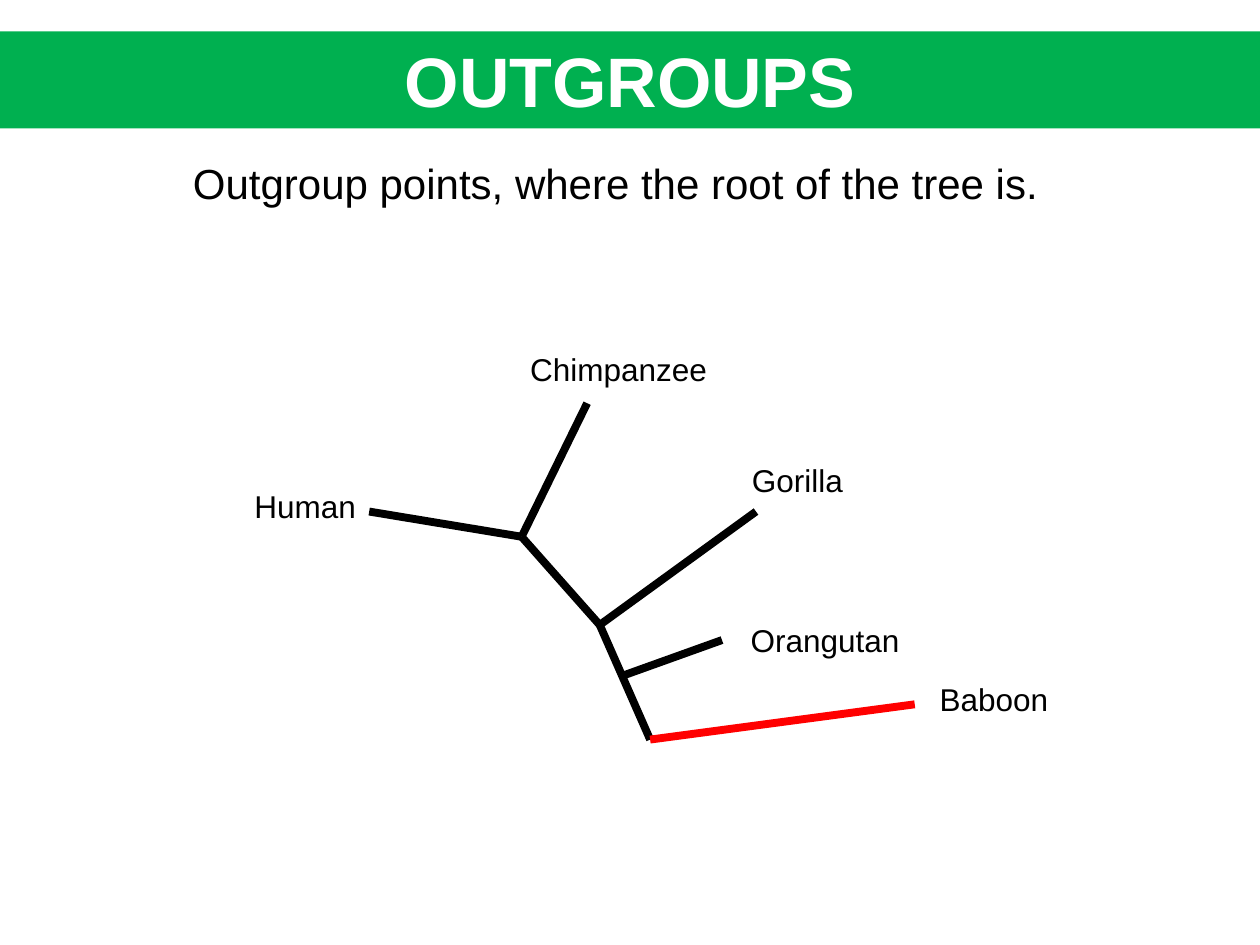
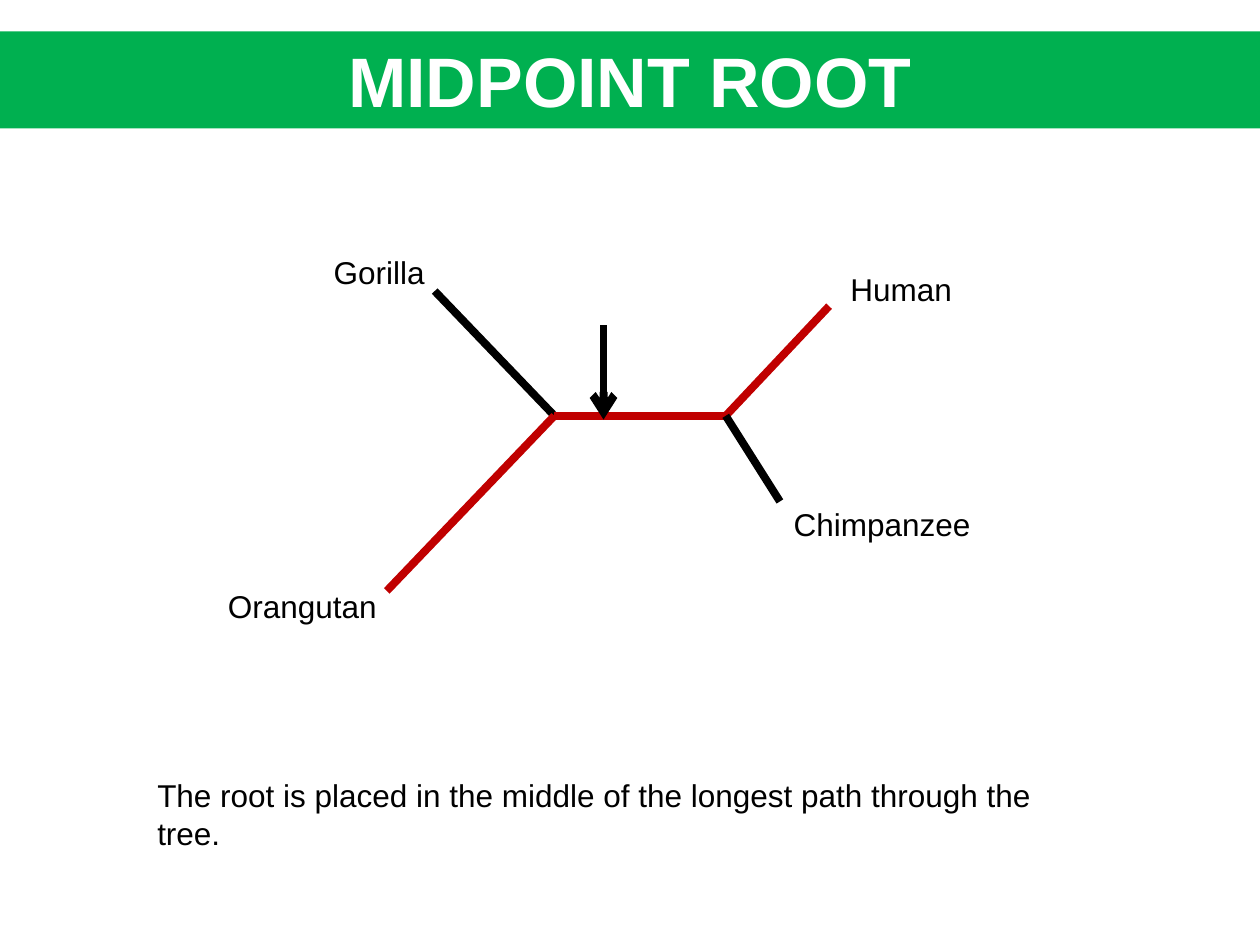
from lxml.etree import SubElement
from pptx import Presentation
from pptx.dml.color import RGBColor
from pptx.enum.shapes import MSO_CONNECTOR, MSO_SHAPE
from pptx.enum.text import MSO_ANCHOR, PP_ALIGN
from pptx.oxml.ns import qn
from pptx.util import Inches, Pt

COLORS = {"band": "00B050", "title": "FFFFFF", "ink": "000000",
          "outgroup": "FF0000", "longest": "C00000"}
FONT = "Arial"
WIDTH, HEIGHT = 10, 7.5
BAND_TOP, BAND_HEIGHT = 0.25, 0.77
LABEL_HEIGHT = 0.4
LABEL_WIDTHS = {"Human": 1.01, "Chimpanzee": 1.62, "Gorilla": 0.93,
                "Orangutan": 1.39, "Baboon": 1.07}

SLIDES = [
    {
        "title": "OUTGROUPS",
        "caption": {"text": "Outgroup points, where the root of the tree is.",
                    "box": (0, 1.2, 9.77, 0.51), "size": 24,
                    "align": PP_ALIGN.CENTER, "wrap": True},
        "points": {
            "Human": (2.93, 4.06), "Chimpanzee": (4.66, 3.2), "Gorilla": (6, 4.06),
            "Orangutan": (5.73, 5.08), "Baboon": (7.26, 5.59),
            "human-chimp": (4.14, 4.26), "african apes": (4.76, 4.96),
            "great apes": (4.95, 5.36), "root": (5.16, 5.87),
        },
        "branches": [
            ("Human", "human-chimp", "ink"),
            ("human-chimp", "Chimpanzee", "ink"),
            ("human-chimp", "african apes", "ink"),
            ("african apes", "Gorilla", "ink"),
            ("african apes", "root", "ink"),
            ("root", "Baboon", "outgroup"),
            ("Orangutan", "great apes", "ink"),
        ],
        "labels": {"Human": (1.92, 3.82), "Chimpanzee": (4.11, 2.73),
                   "Gorilla": (5.87, 3.61), "Orangutan": (5.86, 4.88),
                   "Baboon": (7.36, 5.35)},
        "arrows": [],
    },
    {
        "title": "MIDPOINT ROOT",
        "caption": {"text": "The root is placed in the middle of the longest path through the tree.",
                    "box": (1.15, 6.11, 7.7, LABEL_HEIGHT)},
        "points": {
            "Gorilla": (3.45, 2.31), "Orangutan": (3.07, 4.69),
            "Human": (6.58, 2.43), "Chimpanzee": (6.19, 3.98),
            "left node": (4.4, 3.3), "right node": (5.76, 3.3),
        },
        "branches": [
            ("Gorilla", "left node", "ink"),
            ("Orangutan", "left node", "longest"),
            ("left node", "right node", "longest"),
            ("right node", "Human", "longest"),
            ("right node", "Chimpanzee", "ink"),
        ],
        "labels": {"Human": (6.65, 2.09), "Chimpanzee": (6.2, 3.96),
                   "Gorilla": (2.55, 1.96), "Orangutan": (1.71, 4.61)},
        "arrows": [((4.79, 2.58), (4.79, 3.33))],
    },
]


def color(name):
    return RGBColor.from_string(COLORS[name])


def write(shape, text, size, color_name="ink", bold=False, align=PP_ALIGN.LEFT):
    paragraph = shape.text_frame.paragraphs[0]
    paragraph.text = text
    paragraph.alignment = align
    font = paragraph.font
    font.name, font.size, font.bold = FONT, Pt(size), bold
    font.color.rgb = color(color_name)


def add_text(slide, text, box, size=18, align=PP_ALIGN.LEFT, wrap=False):
    shape = slide.shapes.add_textbox(*map(Inches, box))
    shape.text_frame.word_wrap = wrap
    write(shape, text, size, align=align)


def add_title(slide, text):
    band = slide.shapes.add_shape(
        MSO_SHAPE.RECTANGLE, *map(Inches, (0, BAND_TOP, WIDTH, BAND_HEIGHT)))
    band.shadow.inherit = False
    band.fill.solid()
    band.fill.fore_color.rgb = color("band")
    band.line.fill.background()
    band.text_frame.vertical_anchor = MSO_ANCHOR.MIDDLE
    write(band, text, 40, "title", True, PP_ALIGN.CENTER)


def add_line(slide, start, end, color_name="ink", arrow=False):
    connector = slide.shapes.add_connector(
        MSO_CONNECTOR.STRAIGHT, *map(Inches, start + end))
    connector.line.width = Pt(4.5)
    connector.line.color.rgb = color(color_name)
    properties = connector._element.spPr
    if arrow:
        SubElement(properties.find(qn("a:ln")), qn("a:tailEnd"), type="arrow")
    SubElement(properties, qn("a:effectLst"))


def add_tree_slide(presentation, content):
    slide = presentation.slides.add_slide(presentation.slide_layouts[6])
    add_title(slide, content["title"])
    points = content["points"]
    for start, end, color_name in content["branches"]:
        add_line(slide, points[start], points[end], color_name)
    for start, end in content["arrows"]:
        add_line(slide, start, end, arrow=True)
    for name, corner in content["labels"].items():
        add_text(slide, name, (*corner, LABEL_WIDTHS[name], LABEL_HEIGHT))
    add_text(slide, **content["caption"])


def main():
    """Build the two slides on rooting phylogenetic trees."""
    presentation = Presentation()
    presentation.slide_width = Inches(WIDTH)
    presentation.slide_height = Inches(HEIGHT)
    for content in SLIDES:
        add_tree_slide(presentation, content)
    presentation.save("out.pptx")


if __name__ == "__main__":
    main()
